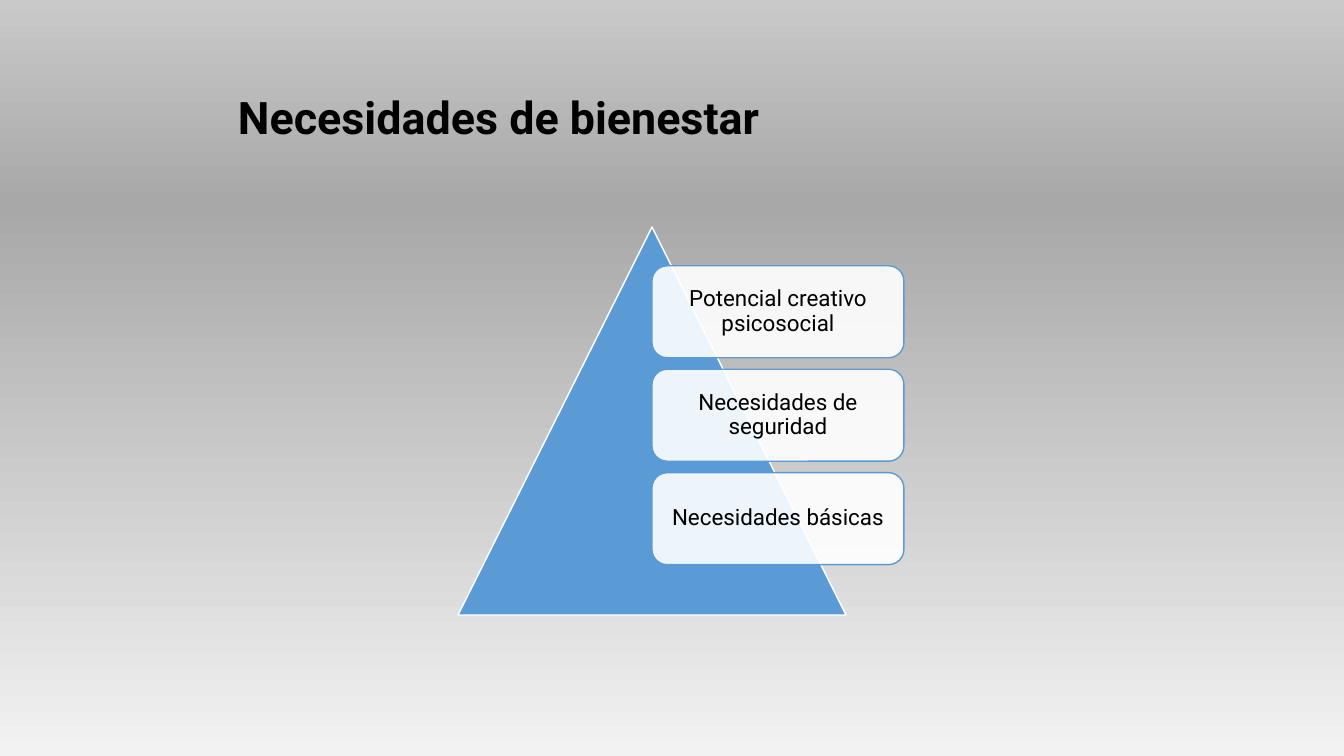
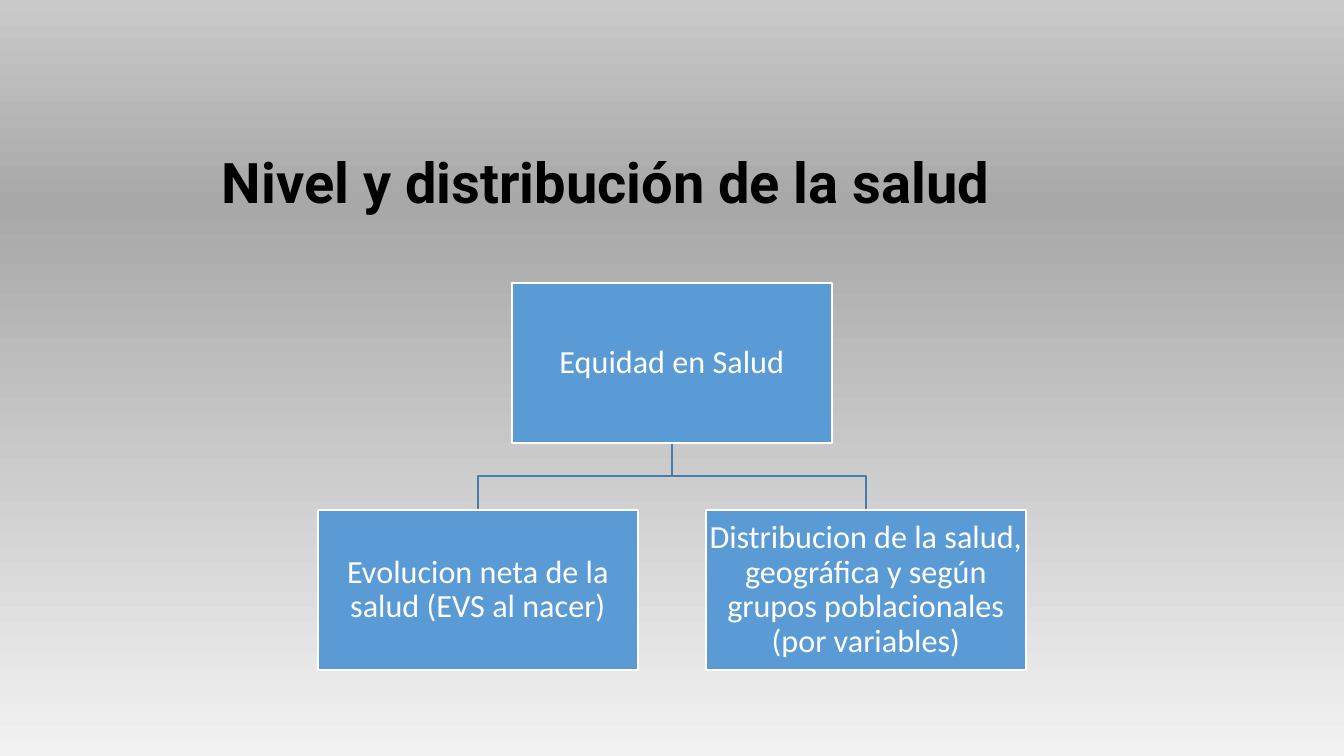
import copy

import pptx
import pptx.dml.color
import pptx.enum.shapes
import pptx.enum.text
import pptx.oxml.ns
import pptx.oxml.xmlchemy
import pptx.util
from lxml import etree

EMU_PER_PX = 914400 / 100.8
PAGE_SIZE = (1344, 756)
TITLE_SIZE = (907, 126)
COLOURS = {
    "ink": "000000",
    "paper": "FFFFFF",
    "block": "5B9BD5",
    "branch": "497CAB",
    "floor": "F2F2F2",
    "horizon": "A8A8A8",
    "sky": "C9C9C9",
}
BACKDROP = [(0, "floor"), (0.73, "horizon"), (1, "sky")]
TITLE_FONT = {"name": "Roboto", "bold": True}
CARD_FONT = {"name": "Roboto", "size": pptx.util.Pt(16)}
NODE_FONT = {"name": "Calibri", "size": pptx.util.Pt(23)}
SHAPES = pptx.enum.shapes.MSO_SHAPE
ALIGN = pptx.enum.text.PP_ALIGN


def px(length):
    return round(length * EMU_PER_PX)


def colour(name):
    return pptx.dml.color.RGBColor.from_string(COLOURS[name])


def apply_format(target, values):
    for name, value in values.items():
        setattr(target, name, value)


def write_text(shape, text, font, ink, align, margins):
    frame = shape.text_frame
    apply_format(frame, {
        "word_wrap": True,
        "vertical_anchor": pptx.enum.text.MSO_ANCHOR.MIDDLE,
    })
    sides = ("margin_left", "margin_top", "margin_right", "margin_bottom")
    apply_format(frame, dict(zip(sides, map(px, margins))))
    para = frame.paragraphs[0]
    apply_format(para, {"alignment": align, "line_spacing": 0.9})
    span = para.add_run()
    span.text = text
    apply_format(span.font, font)
    span.font.color.rgb = colour(ink)


def draw_line(shape, name):
    shape.shadow.inherit = False
    shape.line.color.rgb = colour(name)
    shape.line.width = pptx.util.Pt(1)


def draw_block(page, kind, box, fill, outline):
    shape = page.shapes.add_shape(kind, *map(px, box))
    shape.fill.solid()
    shape.fill.fore_color.rgb = colour(fill)
    draw_line(shape, outline)
    return shape


def set_opacity(shape, percent):
    qn = pptx.oxml.ns.qn
    tint = shape.element.spPr.find(qn("a:solidFill")).find(qn("a:srgbClr"))
    etree.SubElement(tint, qn("a:alpha")).set("val", str(percent * 1000))


def paint_backdrop(page):
    fill = page.background.fill
    fill.gradient()
    fill.gradient_angle = 90
    stop_list = next(page.element.iter(pptx.oxml.ns.qn("a:gsLst")))
    stop_list.append(copy.deepcopy(stop_list[-1]))
    for stop, (position, name) in zip(fill.gradient_stops, BACKDROP):
        stop.position = position
        stop.color.rgb = colour(name)


def add_page(deck, title, corner, points):
    page = deck.slides.add_slide(deck.slide_layouts[6])
    paint_backdrop(page)
    box = page.shapes.add_textbox(*map(px, corner + TITLE_SIZE))
    font = {**TITLE_FONT, "size": pptx.util.Pt(points)}
    write_text(box, title, font, "ink", ALIGN.LEFT, (10, 5, 10, 5))
    return page


def draw_pyramid(page, box, needs):
    left, top, width, side = box
    draw_block(page, SHAPES.ISOSCELES_TRIANGLE, (left, top, side, side),
               "block", "paper")
    card_left = left + side / 2
    pitch = side * 0.8 / len(needs)
    for index, need in enumerate(needs):
        card_box = (card_left, top + side / 10 + index * pitch,
                    left + width - card_left, pitch * 8 / 9)
        card = draw_block(page, SHAPES.ROUNDED_RECTANGLE, card_box,
                          "paper", "block")
        set_opacity(card, 90)
        write_text(card, need, CARD_FONT, "ink", ALIGN.CENTER, (7, 7, 7, 7))


def draw_branch(page, start, end):
    middle = (start[1] + end[1]) / 2
    outline = page.shapes.build_freeform(*start, scale=EMU_PER_PX)
    outline.add_line_segments(
        [(start[0], middle), (end[0], middle), end], close=False)
    branch = outline.convert_to_shape()
    branch.fill.background()
    draw_line(branch, "branch")


def draw_node(page, box, text):
    node = draw_block(page, SHAPES.RECTANGLE, box, "block", "paper")
    write_text(node, text, NODE_FONT, "paper", ALIGN.CENTER, (2, 2, 2, 2))


def draw_tree(page, box, root, children):
    left, top, width, height = box
    node_width, node_height = 320, 160
    centre = left + width / 2
    child_top = top + height - node_height
    step = (width - node_width) / (len(children) - 1)
    child_lefts = [left + index * step for index in range(len(children))]
    for child_left in child_lefts:
        draw_branch(page, (centre, top + node_height),
                    (child_left + node_width / 2, child_top))
    draw_node(page, (centre - node_width / 2, top, node_width, node_height),
              root)
    for child_left, child in zip(child_lefts, children):
        draw_node(page, (child_left, child_top, node_width, node_height),
                  child)


def main():
    deck = pptx.Presentation()
    deck.slide_width, deck.slide_height = map(px, PAGE_SIZE)

    page = add_page(deck, "Necesidades de bienestar", (228, 57), 32)
    draw_pyramid(page, (458, 227, 446, 388), [
        "Potencial creativo psicosocial",
        "Necesidades de seguridad",
        "Necesidades básicas",
    ])

    page = add_page(deck, "Nivel y distribución de la salud", (212, 122), 40)
    draw_tree(page, (318, 283, 708, 387), "Equidad en Salud", [
        "Evolucion neta de la salud (EVS al nacer)",
        "Distribucion de la salud, geográfica y según grupos poblacionales "
        "(por variables)",
    ])

    deck.save("out.pptx")


if __name__ == "__main__":
    main()
